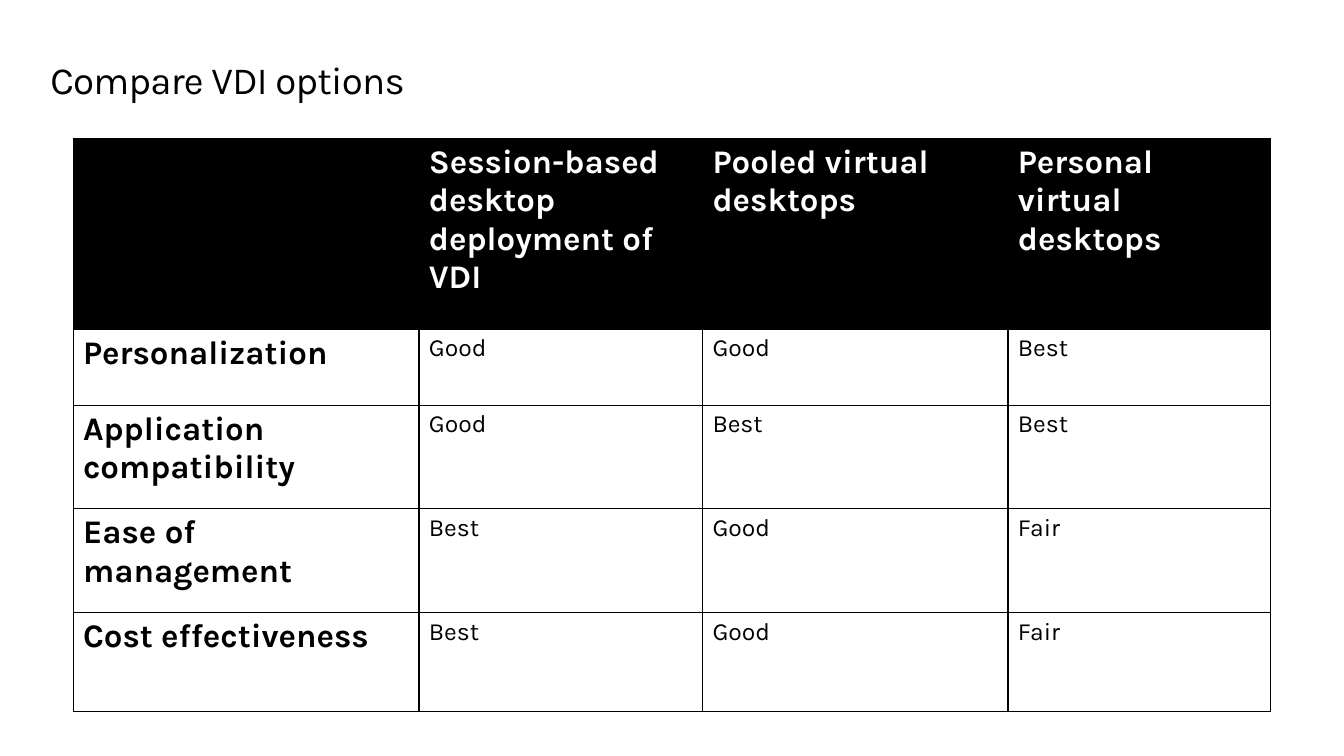
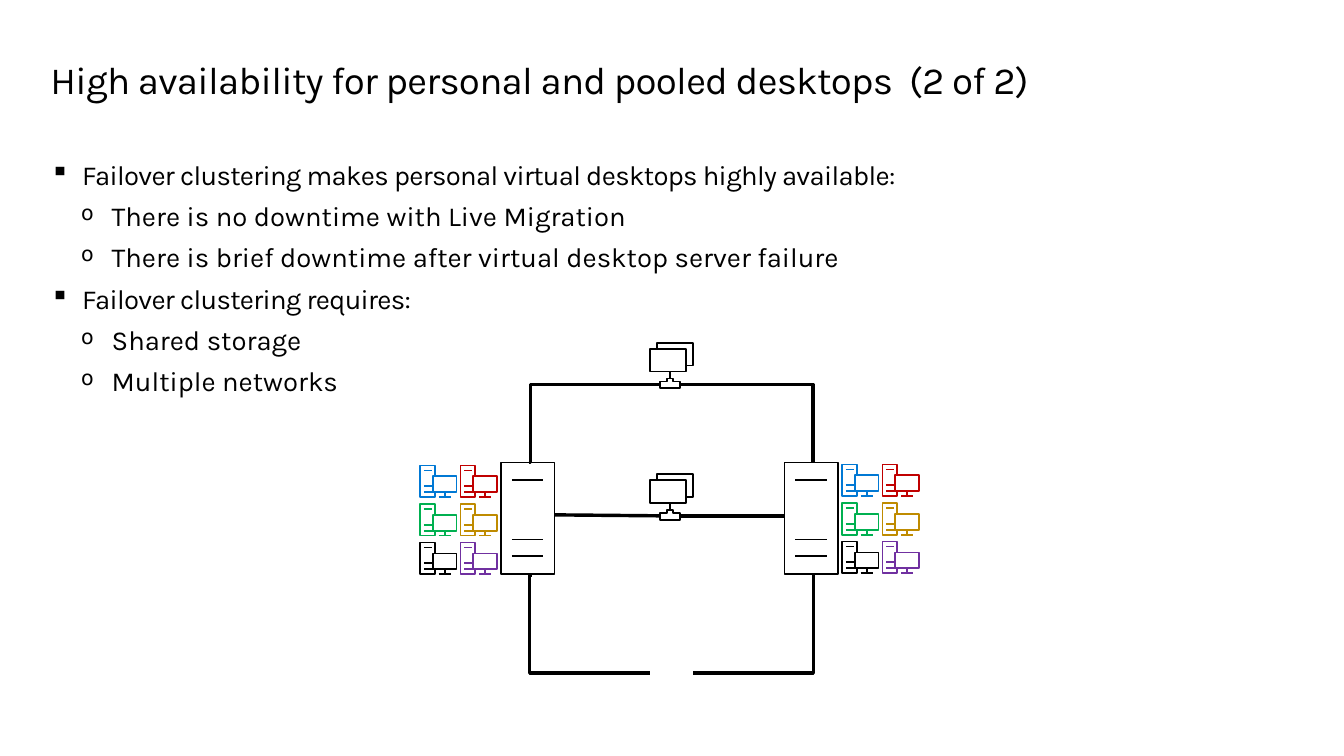
from dataclasses import dataclass

from lxml.etree import SubElement
from pptx import Presentation
from pptx.dml.color import RGBColor
from pptx.enum.shapes import MSO_CONNECTOR as Connector
from pptx.oxml.ns import qn
from pptx.util import Inches, Pt


@dataclass(frozen=True)
class Theme:
    font: str = "Karla"
    ink: str = "000000"
    paper: str = "FFFFFF"
    title_size: int = 28
    body_size: int = 20
    heading_size: int = 24
    rating_size: int = 18
    tight: float = -0.5
    border: float = 1
    icon_line: float = 1.25
    cable_line: float = 2.5
    desktops: tuple = (("0078D4", "C00000"), ("00B050", "BF8B00"), ("000000", "7030A0"))


THEME = Theme()

RATINGS = [
    ("", "Session-based desktop deployment of VDI", "Pooled virtual desktops", "Personal virtual desktops"),
    ("Personalization", "Good", "Good", "Best"),
    ("Application\ncompatibility", "Good", "Best", "Best"),
    ("Ease of management", "Best", "Good", "Fair"),
    ("Cost effectiveness", "Best", "Good", "Fair"),
]
COLUMN_WIDTHS = (3.5, 2.87, 3.09, 2.66)
ROW_HEIGHTS = (1.93, 0.77, 1.05, 1.05, 1)

POINTS = [
    (0, "Failover clustering makes personal virtual desktops highly available:"),
    (1, "There is no downtime with Live Migration"),
    (1, "There is brief downtime after virtual desktop server failure"),
    (0, "Failover clustering requires:"),
    (1, "Shared storage"),
    (1, "Multiple networks"),
]
LEVELS = (
    dict(bullet=("▪", 95), indent=(0.32, -0.32), spacing=THEME.tight),
    dict(bullet=("o", 75), indent=(0.62, -0.31)),
)

DESKTOP = [
    [(0.13, 0.11), (0.37, 0.11), (0.37, 0.27), (0.13, 0.27), (0.13, 0.11)],
    [(0.25, 0.27), (0.25, 0.32)],
    [(0.19, 0.32), (0.31, 0.32)],
    [(0.04, 0.05), (0.12, 0.05)],
    [(0.04, 0.27), (0.13, 0.27)],
    [(0.04, 0.21), (0.13, 0.21)],
    [(0.15, 0.11), (0.15, 0), (0, 0), (0, 0.32), (0.15, 0.32), (0.15, 0.27)],
]
SERVER = [
    [(0, 0), (0.54, 0), (0.54, 1.13), (0, 1.13), (0, 0)],
    *[[(0.11, y), (0.43, y)] for y in (0.18, 0.78, 0.95)],
]
NETWORK = [
    [(0.37, 0.29), (0.01, 0.29), (0.01, 0.06), (0.37, 0.06), (0.37, 0.29)],
    [(0.37, 0.23), (0.44, 0.23), (0.44, 0), (0.08, 0), (0.08, 0.06)],
    [(0.31, 0.46), (0.31, 0.39), (0.24, 0.39), (0.24, 0.36), (0.18, 0.36),
     (0.18, 0.39), (0.11, 0.39), (0.11, 0.46), (0.31, 0.46)],
    [(0.11, 0.42), (0, 0.42)],
    [(0.31, 0.42), (0.42, 0.42)],
    [(0.21, 0.36), (0.21, 0.29)],
]


def write_text(frame, text, *, size, color=THEME.ink, bold=False, spacing=0,
               line_spacing=None, before=None, level=0, indent=None, bullet=None, append=False):
    for index, line in enumerate(text.split("\n")):
        paragraph = frame.add_paragraph() if append or index else frame.paragraphs[0]
        paragraph.level = level
        if line_spacing:
            paragraph.line_spacing = line_spacing
        if before is not None:
            paragraph.space_before = Pt(before)
        properties = paragraph._p.get_or_add_pPr()
        if indent:
            for key, length in zip(("marL", "indent"), indent):
                properties.set(key, str(Inches(length)))
        if bullet:
            mark, percent = bullet
            SubElement(properties, qn("a:buSzPct"), val=str(percent * 1000))
            SubElement(properties, qn("a:buChar"), char=mark)
        run = paragraph.add_run()
        run.text = line
        font = run.font
        font.name, font.size, font.bold = THEME.font, Pt(size), bold
        font.color.rgb = RGBColor.from_string(color)
        if spacing:
            run._r.get_or_add_rPr().set("spc", str(int(spacing * 100)))


def add_text_area(slide, top, height, bottom_inset=0):
    frame = slide.shapes.add_textbox(Inches(0.51), Inches(top), Inches(12.61), Inches(height)).text_frame
    frame.word_wrap = True
    frame.margin_left = frame.margin_top = 0
    frame.margin_right, frame.margin_bottom = Inches(0.1), Inches(bottom_inset)
    return frame


def add_titled_slide(deck, title):
    slide = deck.slides.add_slide(deck.slide_layouts[6])
    write_text(add_text_area(slide, 0.62, 0.45), title, size=THEME.title_size,
               spacing=THEME.tight, line_spacing=0.9)
    return slide


def style_cell(cell, fill):
    properties = cell._tc.get_or_add_tcPr()
    for side in ("a:lnL", "a:lnR", "a:lnT", "a:lnB"):
        edge = SubElement(properties, qn(side), w=str(Pt(THEME.border)))
        SubElement(SubElement(edge, qn("a:solidFill")), qn("a:srgbClr"), val=THEME.ink)
    cell.fill.solid()
    cell.fill.fore_color.rgb = RGBColor.from_string(fill)


def add_ratings_table(slide):
    ratings = slide.shapes.add_table(
        len(RATINGS), len(COLUMN_WIDTHS), Inches(0.74), Inches(1.4),
        Inches(sum(COLUMN_WIDTHS)), Inches(sum(ROW_HEIGHTS))).table
    for column, width in zip(ratings.columns, COLUMN_WIDTHS):
        column.width = Inches(width)
    for row, height in zip(ratings.rows, ROW_HEIGHTS):
        row.height = Inches(height)
    for r, texts in enumerate(RATINGS):
        for c, text in enumerate(texts):
            cell = ratings.cell(r, c)
            is_header, is_heading = r == 0, r == 0 or c == 0
            style_cell(cell, THEME.ink if is_header else THEME.paper)
            if text:
                write_text(cell.text_frame, text, bold=is_heading,
                           size=THEME.heading_size if is_heading else THEME.rating_size,
                           color=THEME.paper if is_header else THEME.ink)


def add_points(slide):
    frame = add_text_area(slide, 1.6, 5.56, bottom_inset=0.05)
    for index, (level, text) in enumerate(POINTS):
        write_text(frame, text, size=THEME.body_size, before=6, level=level,
                   append=index > 0, **LEVELS[level])


def draw_icon(slide, strokes, left, top, color=THEME.ink):
    placed = [[(Inches(left + x), Inches(top + y)) for x, y in stroke] for stroke in strokes]
    builder = slide.shapes.build_freeform(*placed[0][0])
    for index, (start, *rest) in enumerate(placed):
        if index:
            builder.move_to(*start)
        builder.add_line_segments(rest, close=False)
    icon = builder.convert_to_shape()
    icon.shadow.inherit = False
    icon.fill.background()
    icon.line.color.rgb = RGBColor.from_string(color)
    icon.line.width = Pt(THEME.icon_line)


def add_cable(slide, start, end, elbow_x=None):
    kind = Connector.STRAIGHT if elbow_x is None else Connector.ELBOW
    cable = slide.shapes.add_connector(kind, *map(Inches, start + end))
    cable.line.color.rgb = RGBColor.from_string(THEME.ink)
    cable.line.width = Pt(THEME.cable_line)
    properties = cable._element.spPr
    SubElement(properties, qn("a:effectLst"))
    if elbow_x is not None:
        share = round((elbow_x - start[0]) / (end[0] - start[0]) * 100000)
        guides = properties.find(qn("a:prstGeom")).get_or_add_avLst()
        SubElement(guides, qn("a:gd"), name="adj1", fmla=f"val {share}")


def add_cluster_diagram(slide):
    add_cable(slide, (5.38, 5.82), (6.58, 6.81), elbow_x=5.36)
    add_cable(slide, (8.25, 5.82), (7.01, 6.81), elbow_x=8.23)
    add_cable(slide, (5.35, 4.68), (6.68, 3.89), elbow_x=5.37)
    add_cable(slide, (8.25, 4.67), (6.88, 3.89), elbow_x=8.23)
    add_cable(slide, (7.94, 5.22), (6.88, 5.22))
    add_cable(slide, (6.68, 5.22), (5.61, 5.21))
    for server_left, desktops_left, desktops_top in ((5.07, 4.25, 4.71), (7.94, 8.52, 4.7)):
        draw_icon(slide, SERVER, server_left, 4.68)
        for row, colors in enumerate(THEME.desktops):
            for column, color in enumerate(colors):
                draw_icon(slide, DESKTOP, desktops_left + column * 0.41,
                          desktops_top + row * 0.39, color)
    for network_top in (3.47, 4.8):
        draw_icon(slide, NETWORK, 6.57, network_top)


def main():
    deck = Presentation()
    deck.slide_width, deck.slide_height = Inches(13.6), Inches(7.65)
    add_ratings_table(add_titled_slide(deck, "Compare VDI options"))
    availability = add_titled_slide(deck, "High availability for personal and pooled desktops  (2 of 2)")
    add_points(availability)
    add_cluster_diagram(availability)
    deck.save("out.pptx")


if __name__ == "__main__":
    main()
